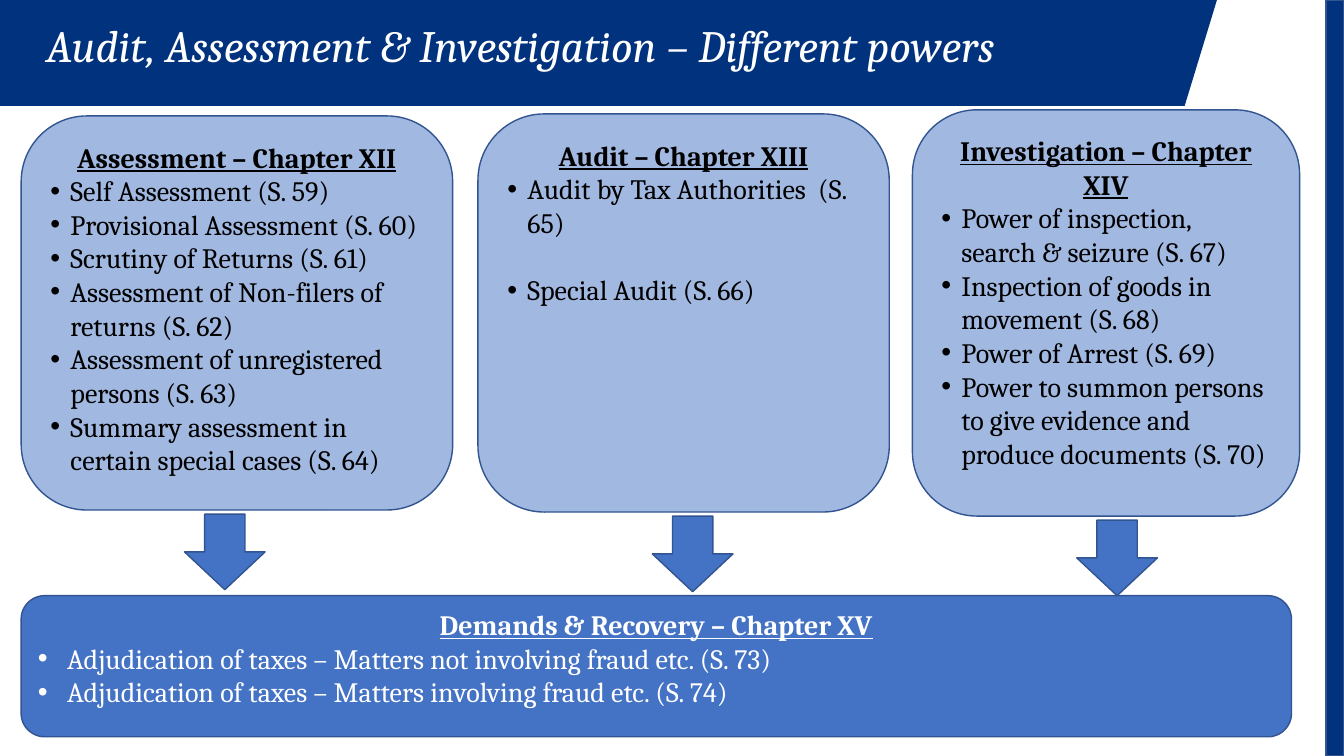
import pptx
import pptx.util
import pptx.dml.color
import pptx.enum.shapes
import pptx.enum.text
import pptx.oxml
import pptx.oxml.ns

Inches = pptx.util.Inches
Pt = pptx.util.Pt
RGB = pptx.dml.color.RGBColor.from_string
SHAPE = pptx.enum.shapes.MSO_SHAPE
ALIGN = pptx.enum.text.PP_ALIGN
ANCHOR = pptx.enum.text.MSO_ANCHOR
NS = pptx.oxml.ns.nsdecls("a")

FONT = "Cambria"
COLORS = {"navy": "00327D", "blue": "4472C4", "line": "325491",
          "white": "FFFFFF", "black": "000000"}

PANELS = [
    {"box": (0.21, 1.15, 4.28, 3.91), "arrow_left": 1.83,
     "head": "Assessment – Chapter XII",
     "items": ["Self Assessment (S. 59)",
               "Provisional Assessment (S. 60)",
               "Scrutiny of Returns (S. 61)",
               "Assessment of Non-filers of returns (S. 62)",
               "Assessment of unregistered persons (S. 63)",
               "Summary assessment in certain special cases (S. 64)"]},
    {"box": (4.74, 1.13, 4.08, 3.95), "arrow_left": 6.47, "gap": 24,
     "head": "Audit – Chapter XIII",
     "items": ["Audit by Tax Authorities  (S. 65)",
               "Special Audit (S. 66)"]},
    {"box": (9.05, 1.09, 3.84, 4.03), "arrow_left": 10.68,
     "head": "Investigation – Chapter XIV",
     "items": ["Power of inspection, search & seizure (S. 67)",
               "Inspection of goods in movement (S. 68)",
               "Power of Arrest (S. 69)",
               "Power to summon persons to give evidence and produce documents (S. 70)"]},
]

DEMANDS = {"head": "Demands & Recovery – Chapter XV",
           "items": ["Adjudication of taxes – Matters not involving fraud etc. (S. 73)",
                     "Adjudication of taxes – Matters involving fraud etc. (S. 74)"]}


def set_attrs(obj, values):
    for name, value in values.items():
        setattr(obj, name, value)


def paint(sp, fill, line=None):
    sp.shadow.inherit = False
    sp.fill.solid()
    sp.fill.fore_color.rgb = RGB(COLORS[fill])
    if line:
        sp.line.color.rgb = RGB(COLORS[line])
        sp.line.width = Pt(1)
    else:
        sp.line.fill.background()


def add_box(s, kind, box, fill):
    sp = s.shapes.add_shape(kind, *map(Inches, box))
    paint(sp, fill, "line")
    return sp


def set_alpha(sp, percent):
    color = sp.fill._xPr.find(".//" + pptx.oxml.ns.qn("a:srgbClr"))
    color.append(pptx.oxml.parse_xml(f'<a:alpha {NS} val="{percent * 1000}"/>'))


def add_bullet(p, indent):
    pPr = p._p.get_or_add_pPr()
    pPr.set("marL", str(Inches(indent)))
    pPr.set("indent", str(-Inches(indent)))
    pPr.append(pptx.oxml.parse_xml(f'<a:buFont {NS} typeface="Arial"/>'))
    pPr.append(pptx.oxml.parse_xml(f'<a:buChar {NS} char="•"/>'))


def write_run(p, text, color, **values):
    r = p.add_run()
    r.text = text
    r.font.color.rgb = RGB(COLORS[color])
    set_attrs(r.font, {"name": FONT, "size": Pt(20), **values})


def write_list(tf, head, items, color, indent, gap=0):
    set_attrs(tf, {"word_wrap": True, "vertical_anchor": ANCHOR.TOP})
    p = tf.paragraphs[0]
    p.alignment = ALIGN.CENTER
    write_run(p, head, color, bold=True, underline=True)
    for i, item in enumerate(items):
        p = tf.add_paragraph()
        set_attrs(p, {"alignment": ALIGN.LEFT, "space_before": Pt(gap if i else 0)})
        add_bullet(p, indent)
        write_run(p, item, color)


def add_header(s, box):
    left, top, width, height = box
    right = left + width
    fb = s.shapes.build_freeform(Inches(left), Inches(top))
    fb.add_line_segments([(Inches(x), Inches(y)) for x, y in (
        (left, top + height), (right - 0.32, top + height), (right, top))])
    paint(fb.convert_to_shape(), "navy")

    title = s.shapes.title
    s.shapes._spTree.append(title._element)
    set_attrs(title, {"left": Inches(left + 0.36), "top": Inches(top + 0.16),
                      "width": Inches(10.8), "height": Inches(0.64)})
    tf = title.text_frame
    set_attrs(tf, {"word_wrap": True, "vertical_anchor": ANCHOR.MIDDLE,
                   "auto_size": pptx.enum.text.MSO_AUTO_SIZE.NONE})
    p = tf.paragraphs[0]
    set_attrs(p, {"alignment": ALIGN.LEFT, "line_spacing": 0.9})
    write_run(p, "Audit, Assessment & Investigation – Different powers", "white",
              size=Pt(32), italic=True)


def add_panel(s, box, arrow_left, head, items, gap=0):
    sp = add_box(s, SHAPE.ROUNDED_RECTANGLE, box, "blue")
    set_alpha(sp, 50)
    write_list(sp.text_frame, head, items, "black", 0.2, gap)
    bottom = box[1] + box[3]
    add_box(s, SHAPE.DOWN_ARROW, (arrow_left, bottom + 0.04, 0.8, 0.75), "blue")


def add_demands(s, box):
    sp = add_box(s, SHAPE.ROUNDED_RECTANGLE, box, "blue")
    write_list(sp.text_frame, color="white", indent=0.29, **DEMANDS)


def main():
    prs = pptx.Presentation()
    set_attrs(prs, {"slide_width": Inches(13.33), "slide_height": Inches(7.5)})
    s = prs.slides.add_slide(prs.slide_layouts[5])
    add_header(s, (0, 0, 12.07, 1.05))
    add_box(s, SHAPE.RECTANGLE, (13.15, 0, 0.18, 7.5), "navy")
    for panel in PANELS:
        add_panel(s, **panel)
    add_demands(s, (0.21, 5.91, 12.6, 1.4))
    prs.save("out.pptx")


if __name__ == "__main__":
    main()
